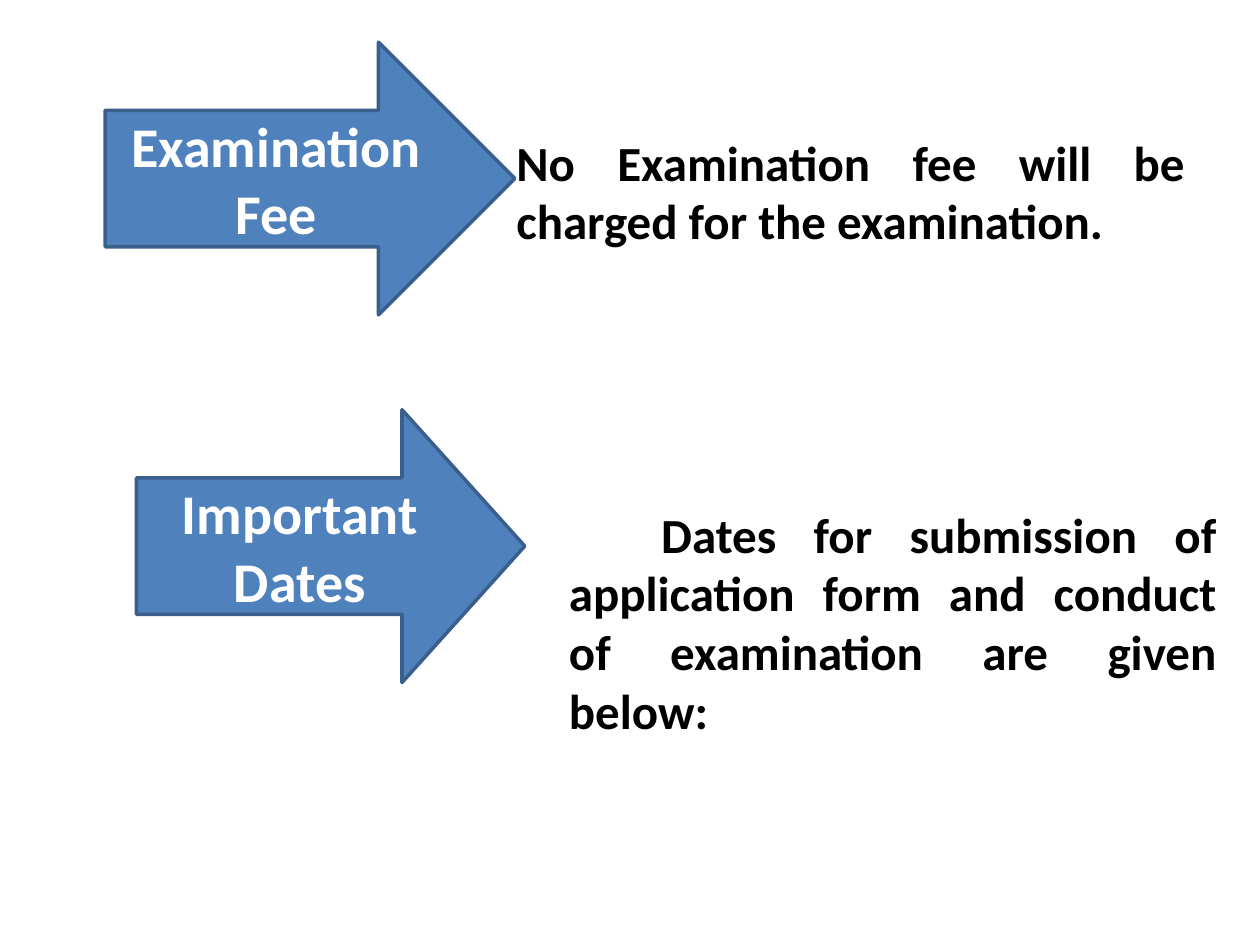
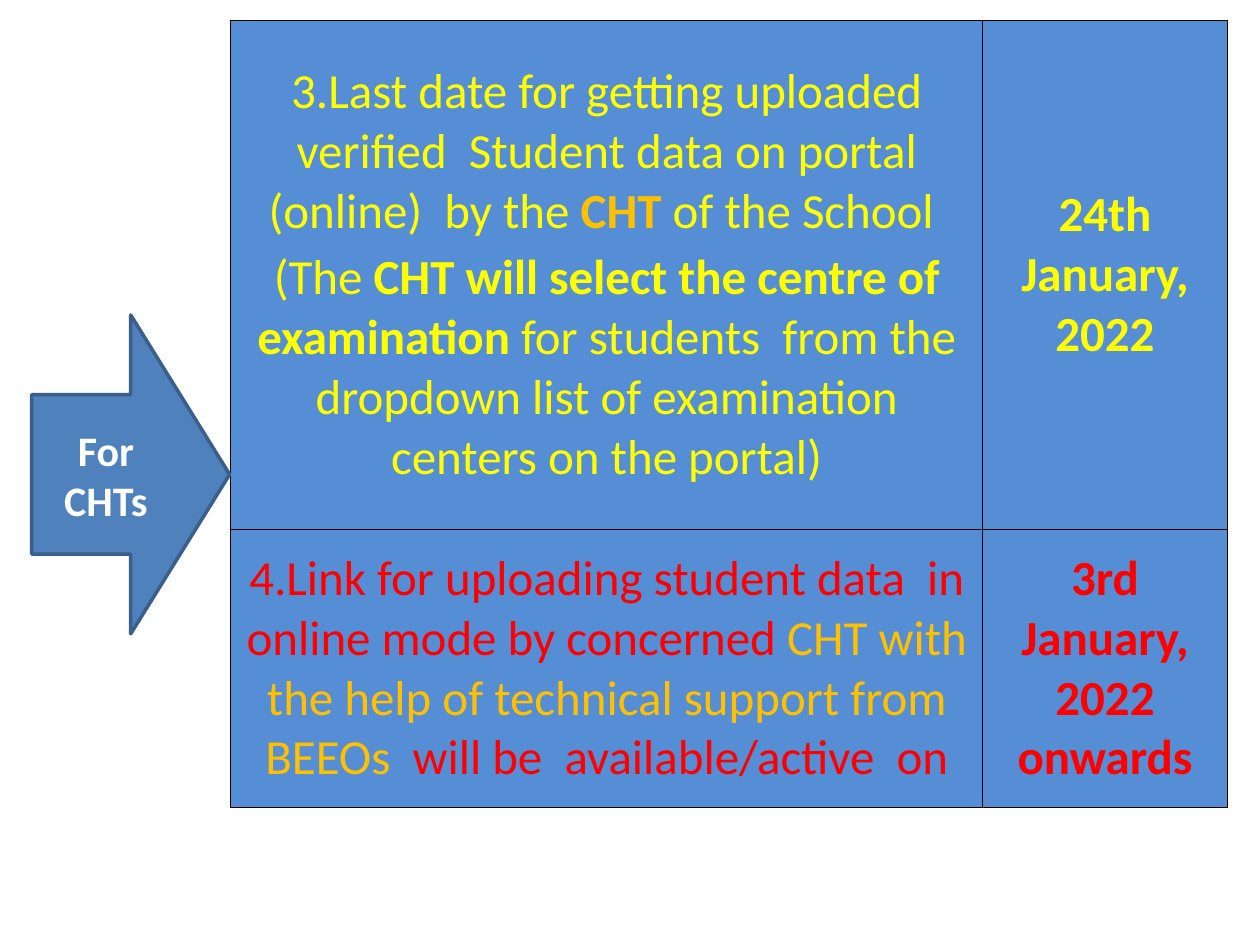
import dataclasses

import pptx
import pptx.dml.color
import pptx.enum.shapes
import pptx.enum.text
import pptx.oxml
import pptx.oxml.ns
import pptx.util

Cm = pptx.util.Cm
Pt = pptx.util.Pt
Align = pptx.enum.text.PP_ALIGN
Anchor = pptx.enum.text.MSO_ANCHOR


@dataclasses.dataclass(frozen=True)
class Theme:
    font: str = "Calibri"
    arrow_fill: str = "4F81BD"
    arrow_line: str = "3A5F8C"
    cell_fill: str = "558ED5"
    white: str = "FFFFFF"
    black: str = "000000"
    yellow: str = "FFFF00"
    amber: str = "FFC000"
    red: str = "FF0000"
    heading_size: int = 32
    body_size: int = 28
    small_size: int = 24


theme = Theme()
rgb = pptx.dml.color.RGBColor.from_string


def add_span(para, text, size, color, bold):
    span = para.add_run()
    span.text = text
    span.font.name = theme.font
    span.font.size = Pt(size)
    span.font.bold = bold
    span.font.color.rgb = rgb(color)


def add_arrow(page, place, label, size, head=0.5):
    """Add a labelled block arrow; head is its point length over its shorter side."""
    arrow = page.shapes.add_shape(
        pptx.enum.shapes.MSO_SHAPE.RIGHT_ARROW, *map(Cm, place))
    arrow.adjustments[1] = head
    arrow.shadow.inherit = False
    arrow.fill.solid()
    arrow.fill.fore_color.rgb = rgb(theme.arrow_fill)
    arrow.line.color.rgb = rgb(theme.arrow_line)
    arrow.line.width = Pt(2)
    arrow.text_frame.word_wrap = True
    arrow.text_frame.vertical_anchor = Anchor.MIDDLE
    para = arrow.text_frame.paragraphs[0]
    para.alignment = Align.CENTER
    add_span(para, label, size, theme.white, True)


deck = pptx.Presentation()
deck.slide_width = Cm(25.4)
deck.slide_height = Cm(19.05)
blank_layout = deck.slide_layouts[6]

# Slide 1: fee and dates
page = deck.slides.add_slide(blank_layout)
add_arrow(page, (2.12, 0.85, 8.26, 5.5), "Examination Fee", theme.heading_size)
add_arrow(page, (2.75, 8.26, 7.83, 5.5), "Important Dates", theme.heading_size, 0.45)

statements = [
    ((10.16, 2.54, 13.97, 2.65), Anchor.TOP, 0,
     "No Examination fee will be charged for the examination."),
    ((11.22, 9.53, 13.55, 5.5), Anchor.BOTTOM, 1.86,
     "Dates for submission of application form and conduct of examination "
     "are given below:"),
]
for place, anchor, first_indent, text in statements:
    box = page.shapes.add_textbox(*map(Cm, place))
    box.text_frame.word_wrap = True
    box.text_frame.vertical_anchor = anchor
    para = box.text_frame.paragraphs[0]
    para.alignment = Align.JUSTIFY
    para._p.get_or_add_pPr().set("indent", str(Cm(first_indent)))
    add_span(para, text, theme.body_size, theme.black, True)

# Slide 2: dates for CHTs; each cell is a list of paragraphs of (text, colour, bold)
page = deck.slides.add_slide(blank_layout)
schedule = [
    [
        [
            [("3.Last date for getting uploaded verified  Student data on portal "
              "(online)  by the ", theme.yellow, False),
             ("CHT ", theme.amber, True),
             ("of the School ", theme.yellow, False)],
            [("(The ", theme.yellow, False),
             ("CHT will select the centre of examination ", theme.yellow, True),
             ("for students  from the dropdown list of examination centers "
              "on the portal)", theme.yellow, False)],
        ],
        [[("24th January, 2022", theme.yellow, True)]],
    ],
    [
        [
            [("4.Link for uploading student data  in online mode by concerned ",
              theme.red, False),
             ("CHT with the help of technical support from BEEOs  ",
              theme.amber, False),
             ("will be  available/active  on", theme.red, False)],
        ],
        [[("3rd January, 2022 onwards", theme.red, True)]],
    ],
]
column_widths = [15.16, 4.93]
row_heights = [10.26, 5.61]
table = page.shapes.add_table(
    len(row_heights), len(column_widths), Cm(4.65), Cm(0.41),
    Cm(sum(column_widths)), Cm(sum(row_heights))).table
table.first_row = False
table.horz_banding = False
for column, width in zip(table.columns, column_widths):
    column.width = Cm(width)
for row, height in zip(table.rows, row_heights):
    row.height = Cm(height)

for row, row_content in zip(table.rows, schedule):
    for cell, paragraphs in zip(row.cells, row_content):
        cell.fill.solid()
        cell.fill.fore_color.rgb = rgb(theme.cell_fill)
        cell.vertical_anchor = Anchor.MIDDLE
        cell.margin_left = cell.margin_right = Cm(0.18)
        cell.margin_top = cell.margin_bottom = 0
        for position, side in enumerate(("lnL", "lnR", "lnT", "lnB")):
            border = pptx.oxml.parse_xml(
                f'<a:{side} {pptx.oxml.ns.nsdecls("a")} w="{Pt(1)}"><a:solidFill>'
                f'<a:srgbClr val="{theme.black}"/></a:solidFill></a:{side}>')
            cell._tc.get_or_add_tcPr().insert(position, border)
        for number, spans in enumerate(paragraphs):
            frame = cell.text_frame
            para = frame.add_paragraph() if number else frame.paragraphs[0]
            para.alignment = Align.CENTER
            para.space_before = para.space_after = Pt(1.8)
            for text, color, bold in spans:
                add_span(para, text, theme.body_size, color, bold)

add_arrow(page, (0.64, 6.35, 3.99, 6.43), "For CHTs", theme.small_size)

deck.save("out.pptx")
